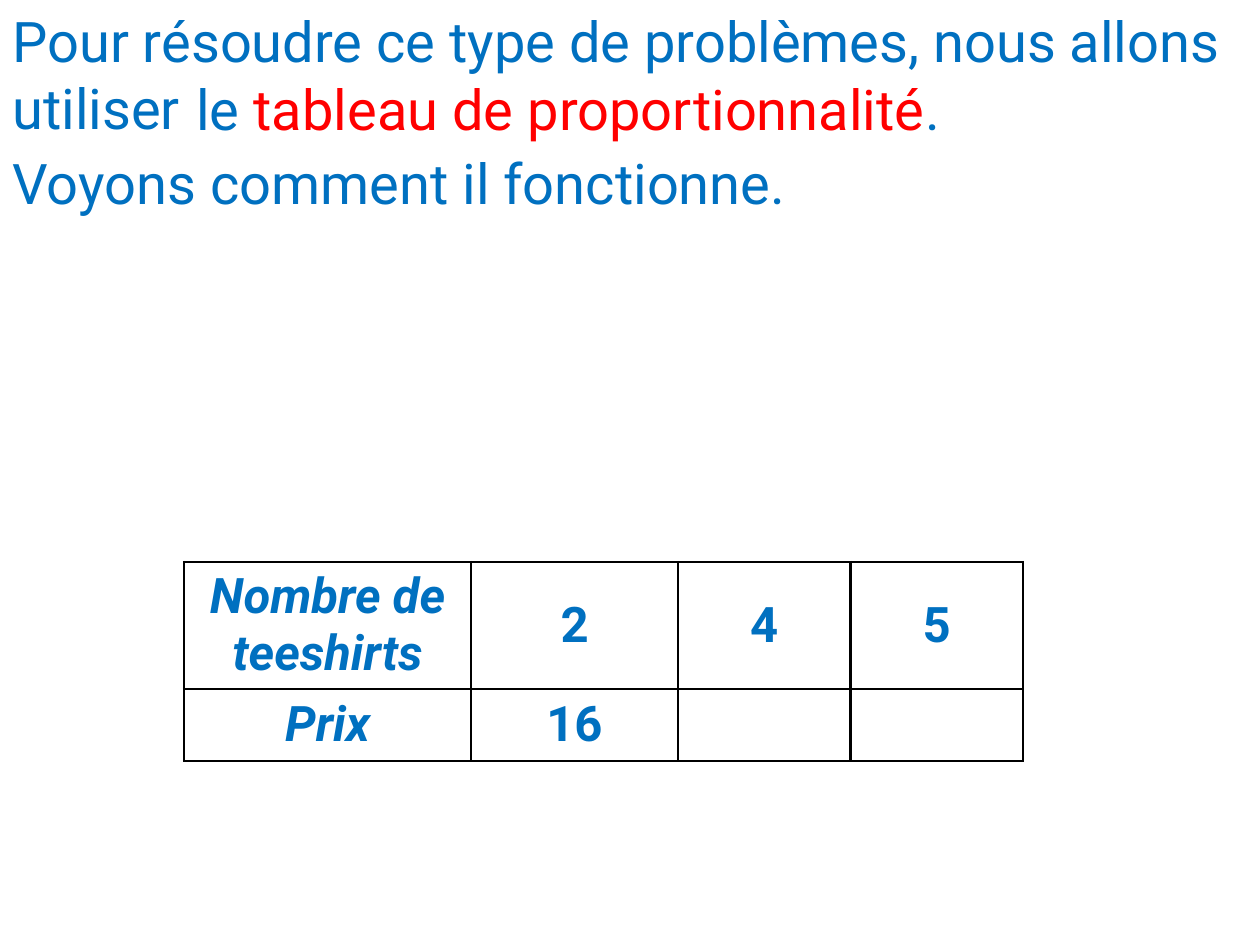
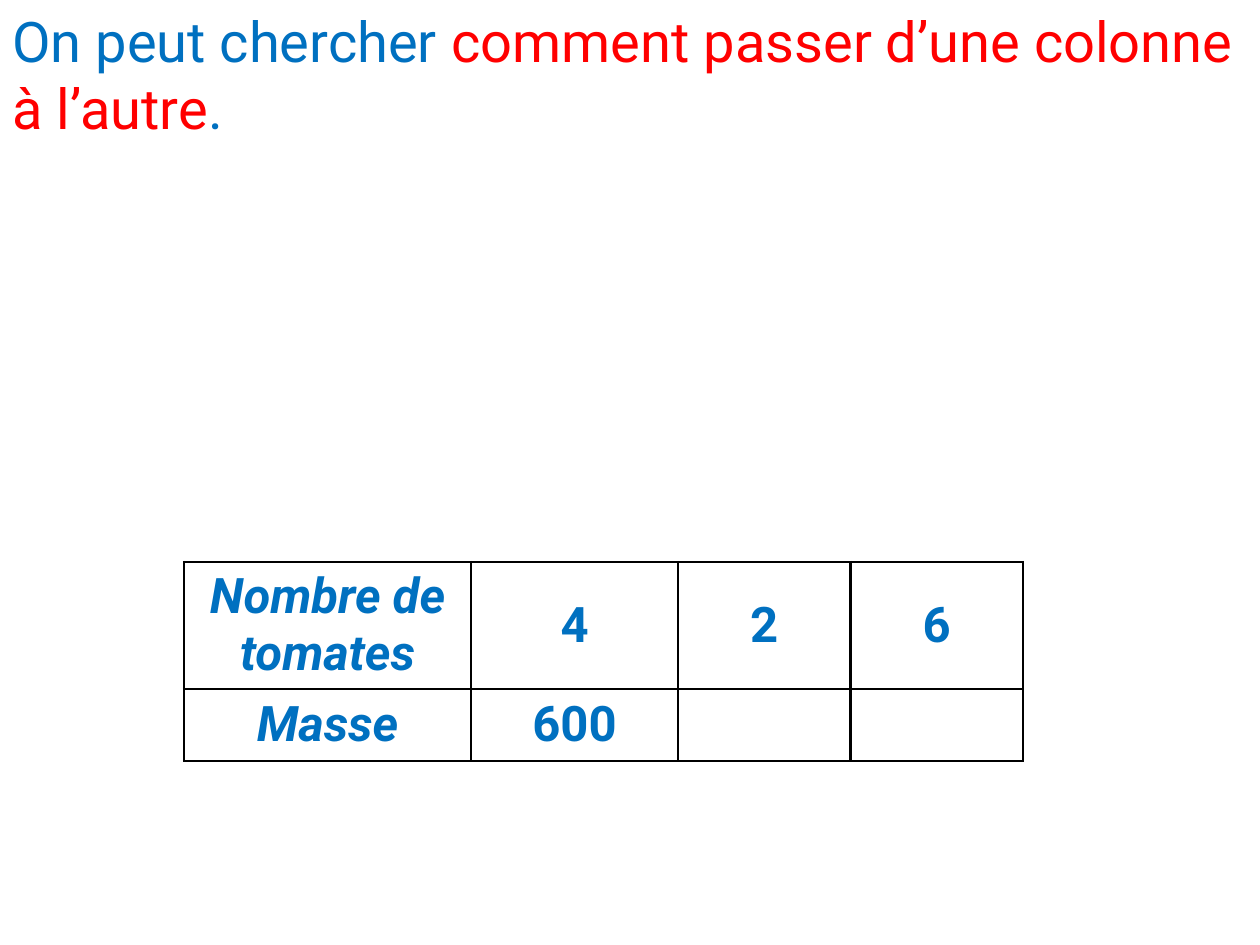
import dataclasses

import pptx
import pptx.dml.color
import pptx.enum.text
import pptx.oxml.ns
import pptx.util
from lxml import etree
from pptx.util import Inches


@dataclasses.dataclass(frozen=True)
class Theme:
    font: str = "Roboto"
    blue: str = "0070C0"
    red: str = "FF0000"
    border: str = "000000"
    border_width: float = 1.5
    sentence_size: int = 32
    cell_size: int = 28


class Lesson:
    column_widths = (2.28, 1.64, 1.37, 1.37)
    row_heights = (1.01, 0.57)

    def __init__(self, theme):
        self.theme = theme
        self.deck = pptx.Presentation()
        self.deck.slide_width = Inches(10)
        self.deck.slide_height = Inches(7.5)
        self.slide = None

    def new_slide(self):
        self.slide = self.deck.slides.add_slide(self.deck.slide_layouts[6])

    def color(self, font, value):
        font.color.rgb = pptx.dml.color.RGBColor.from_string(value)

    def sentence(self, left, top, width, height, *parts):
        box = self.slide.shapes.add_textbox(
            Inches(left), Inches(top), Inches(width), Inches(height))
        frame = box.text_frame
        frame.word_wrap = True
        frame.auto_size = pptx.enum.text.MSO_AUTO_SIZE.SHAPE_TO_FIT_TEXT
        paragraph = frame.paragraphs[0]
        paragraph.font.name = self.theme.font
        paragraph.font.size = pptx.util.Pt(self.theme.sentence_size)
        for text, value in parts:
            run = paragraph.add_run()
            run.text = text
            self.color(run.font, value)

    def borders(self, cell):
        properties = cell._tc.get_or_add_tcPr()
        qn = pptx.oxml.ns.qn
        width = str(pptx.util.Pt(self.theme.border_width))
        for side in ("lnL", "lnR", "lnT", "lnB"):
            line = etree.SubElement(properties, qn(f"a:{side}"), w=width)
            fill = etree.SubElement(line, qn("a:solidFill"))
            etree.SubElement(fill, qn("a:srgbClr"), val=self.theme.border)

    def cell(self, cell, text, is_label):
        self.borders(cell)
        cell.fill.background()
        cell.vertical_anchor = pptx.enum.text.MSO_ANCHOR.MIDDLE
        cell.margin_left = cell.margin_right = Inches(0.07)
        cell.margin_top = cell.margin_bottom = 0
        cell.text = text
        paragraph = cell.text_frame.paragraphs[0]
        paragraph.alignment = pptx.enum.text.PP_ALIGN.CENTER
        font = paragraph.font
        font.name = self.theme.font
        font.size = pptx.util.Pt(self.theme.cell_size)
        font.bold = True
        font.italic = is_label
        self.color(font, self.theme.blue)

    def proportion_table(self, *rows):
        table = self.slide.shapes.add_table(
            len(self.row_heights), len(self.column_widths),
            Inches(1.46), Inches(4.46),
            Inches(sum(self.column_widths)), Inches(sum(self.row_heights))).table
        table.first_row = table.horz_banding = False
        for column, width in zip(table.columns, self.column_widths):
            column.width = Inches(width)
        for row, height, texts in zip(table.rows, self.row_heights, rows):
            row.height = Inches(height)
            for index, (cell, text) in enumerate(zip(row.cells, texts)):
                self.cell(cell, text, is_label=index == 0)


def main():
    theme = Theme()
    lesson = Lesson(theme)

    lesson.new_slide()
    lesson.sentence(
        0, 0, 10, 1.18,
        ("Pour résoudre ce type de problèmes, nous allons utiliser", theme.blue))
    lesson.sentence(
        1.46, 0.54, 6.22, 0.64,
        ("le ", theme.blue),
        ("tableau de proportionnalité", theme.red),
        (".", theme.blue))
    lesson.proportion_table(
        ("Nombre de teeshirts", "2", "4", "5"),
        ("Prix", "16", "", ""))
    lesson.sentence(
        0, 1.13, 10, 0.64, ("Voyons comment il fonctionne.", theme.blue))

    lesson.new_slide()
    lesson.proportion_table(
        ("Nombre de tomates", "4", "2", "6"),
        ("Masse", "600", "", ""))
    lesson.sentence(
        0, 0, 10, 1.18,
        ("On peut chercher ", theme.blue),
        ("comment passer d’une colonne à l’autre", theme.red),
        (".", theme.blue))

    lesson.deck.save("out.pptx")


if __name__ == "__main__":
    main()
